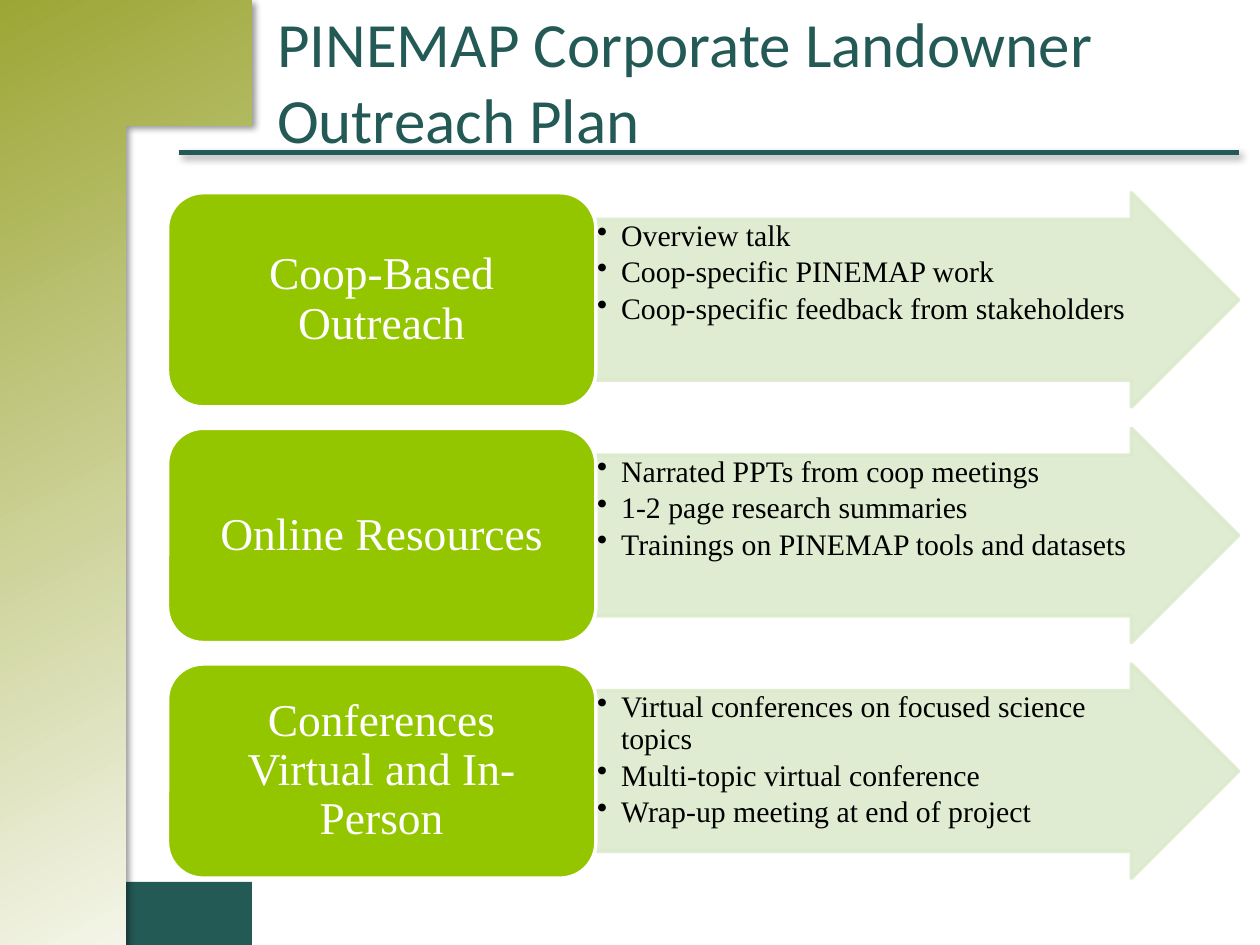
import pptx
import pptx.util
import pptx.dml.color
import pptx.enum.shapes
import pptx.enum.text
import pptx.oxml
import pptx.oxml.ns

Inch = pptx.util.Inches
Pt = pptx.util.Pt
RGB = pptx.dml.color.RGBColor
Kind = pptx.enum.shapes.MSO_SHAPE
Align = pptx.enum.text.PP_ALIGN
Anchor = pptx.enum.text.MSO_ANCHOR
qn = pptx.oxml.ns.qn

TEAL = RGB(0x23, 0x5A, 0x56)
OLIVE = RGB(0x9C, 0xA6, 0x35)
LIME = RGB(0x94, 0xC6, 0x00)
PALE = RGB(0xDC, 0xEA, 0xCC)
WHITE = RGB(0xFF, 0xFF, 0xFF)
BLACK = RGB(0x00, 0x00, 0x00)
SERIF = "Times New Roman"

TITLE = "PINEMAP Corporate Landowner Outreach Plan"
ROWS = [
    (["Coop-Based Outreach"],
     ["Overview talk", "Coop-specific PINEMAP work",
      "Coop-specific feedback from stakeholders"]),
    (["Online Resources"],
     ["Narrated PPTs from coop meetings", "1-2 page research summaries",
      "Trainings on PINEMAP tools and datasets"]),
    (["Conferences", "Virtual and In-Person"],
     ["Virtual conferences on focused science topics",
      "Multi-topic virtual conference", "Wrap-up meeting at end of project"]),
]
BAND = [(2.31, 0), (-0.18, 2.66), (0.57, 5.59), (2.0, 7.5)]
WAVE = [(2.2, 0), (-0.52, 3.05), (0.67, 5.98), (1.34, 7.5)]

WIDE, HIGH = 10, 7.5
LEFT, RIGHT, TOP = 1.33, 9.83, 1.53
SPLIT = LEFT + 0.4 * (RIGHT - LEFT)
TALL = 1.7
STEP = 1.1 * TALL


def node(parent, tag, **attrs):
    item = pptx.oxml.parse_xml(f"<{tag} {pptx.oxml.ns.nsdecls('a')}/>")
    for key, val in attrs.items():
        item.set(key, str(val))
    parent.append(item)
    return item


def shade(list_el):
    cast = node(list_el, "a:outerShdw", blurRad=Pt(4), dist=Pt(3),
                dir=45 * 60000, algn="tl", rotWithShape=0)
    node(node(cast, "a:srgbClr", val=BLACK), "a:alpha", val=40000)


def write(shape, lines, size=17, font=SERIF, color=BLACK, align=Align.LEFT,
          anchor=Anchor.TOP, pad=(0.01, 0.01), space=0.9, after=0, bullet=False):
    frame = shape.text_frame
    frame.word_wrap = True
    frame.auto_size = pptx.enum.text.MSO_AUTO_SIZE.NONE
    frame.vertical_anchor = anchor
    frame.margin_left = frame.margin_right = Inch(pad[0])
    frame.margin_top = frame.margin_bottom = Inch(pad[1])
    for i, line in enumerate(lines):
        para = frame.add_paragraph() if i else frame.paragraphs[0]
        para.text = line
        para.alignment = align
        para.line_spacing = space
        para.space_before = Pt(0)
        para.space_after = Pt(after)
        if bullet:
            para.level = 1
            props = para._p.get_or_add_pPr()
            props.set("marL", str(Inch(0.19)))
            props.set("indent", str(-Inch(0.19)))
            node(props, "a:buChar", char="•")
        para.font.size = Pt(size)
        para.font.name = font
        para.font.color.rgb = color


def curve(ends, count=60):
    for i in range(count + 1):
        t = i / count
        parts = ((1 - t) ** 3, 3 * t * (1 - t) ** 2, 3 * t * t * (1 - t), t ** 3)
        yield tuple(sum(w * p[axis] for w, p in zip(parts, ends)) for axis in (0, 1))


def sweep(shapes, ends):
    start, *rest = curve(ends)
    build = shapes.build_freeform(*start, scale=Inch(1))
    build.add_line_segments(rest + [(0, HIGH), (0, 0)], close=True)
    shape = build.convert_to_shape()
    shape.line.fill.background()
    shape.shadow.inherit = False
    return shape


def block(shapes, kind, left, top, width, fill, edge):
    shape = shapes.add_shape(kind, Inch(left), Inch(top), Inch(width), Inch(TALL))
    shape.fill.solid()
    shape.fill.fore_color.rgb = fill
    shape.line.color.rgb = edge
    shape.line.width = Pt(2)
    shape.shadow.inherit = False
    return shape


def main():
    deck = pptx.Presentation()
    deck.slide_width, deck.slide_height = Inch(WIDE), Inch(HIGH)
    slide = deck.slides.add_slide(deck.slide_layouts[5])
    shapes = slide.shapes

    band = sweep(shapes, BAND)
    band.fill.solid()
    band.fill.fore_color.rgb = TEAL
    wave = sweep(shapes, WAVE)
    wave.fill.gradient()
    wave.fill.gradient_angle = 360 - 63
    for stop, color in zip(wave.fill.gradient_stops, (OLIVE, WHITE)):
        stop.color.rgb = color
    shade(wave.element.spPr.find(qn("a:effectLst")))

    rule = shapes.add_connector(pptx.enum.shapes.MSO_CONNECTOR.STRAIGHT,
                                Inch(1.42), Inch(1.21), Inch(RIGHT), Inch(1.21))
    rule.line.color.rgb = TEAL
    rule.line.width = Pt(3)
    shade(node(rule.element.spPr, "a:effectLst"))

    title = shapes.title
    title.left, title.top, title.width, title.height = map(Inch, (2.1, 0, 7.74, 1.27))
    shapes.element.append(title.element)
    write(title, [TITLE], size=36, font="Calibri", color=TEAL,
          anchor=Anchor.MIDDLE, pad=(0.1, 0.05), space=1.0)

    for i, (head, points) in enumerate(ROWS):
        top = TOP + i * STEP
        arrow = block(shapes, Kind.RIGHT_ARROW, SPLIT, top, RIGHT - SPLIT, PALE, PALE)
        arrow.adjustments[0], arrow.adjustments[1] = 0.75, 0.5
        for tint in arrow.element.spPr.iter(qn("a:srgbClr")):
            node(tint, "a:alpha", val=90000)
        write(arrow, points, after=2.5, bullet=True)
        card = block(shapes, Kind.ROUNDED_RECTANGLE, LEFT, top, SPLIT - LEFT, LIME, WHITE)
        write(card, head, size=26, color=WHITE, align=Align.CENTER,
              anchor=Anchor.MIDDLE, pad=(0.11, 0.05))

    deck.save("out.pptx")


if __name__ == "__main__":
    main()
